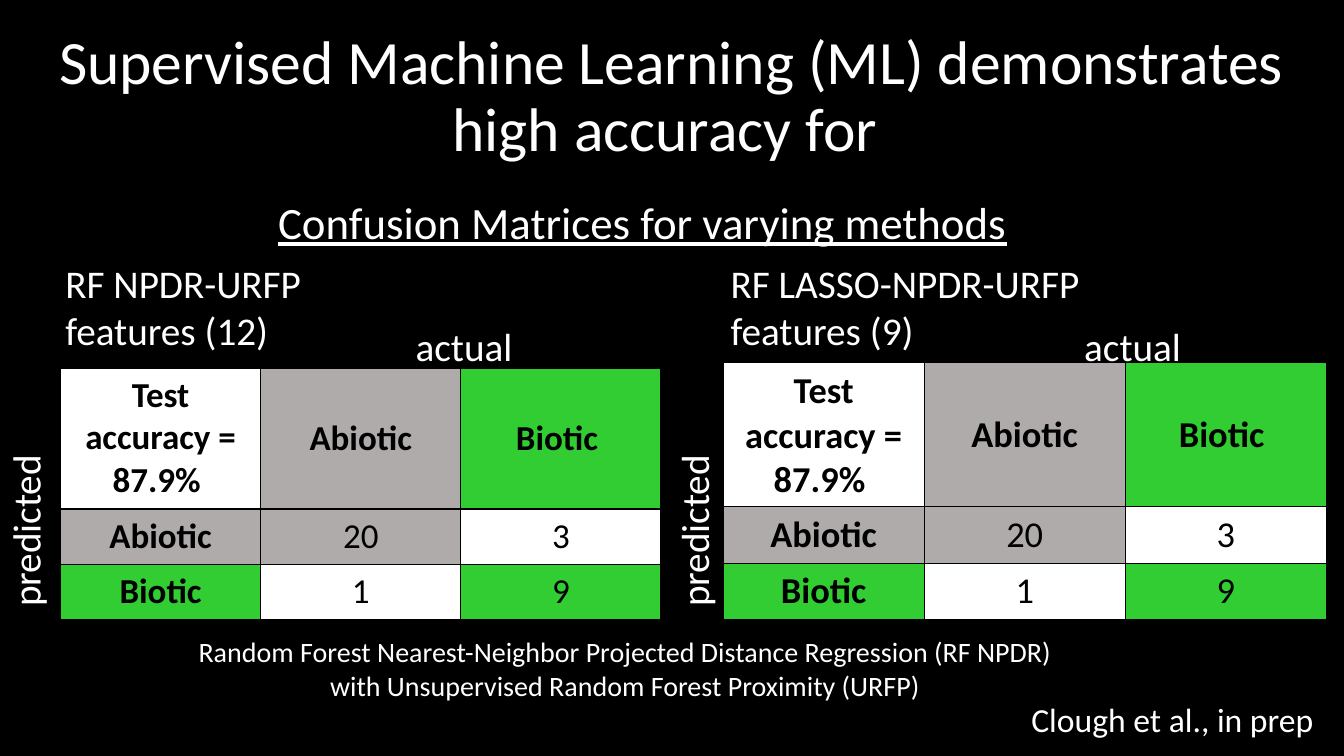
from dataclasses import dataclass

from lxml.etree import SubElement
from pptx import Presentation
from pptx.dml.color import RGBColor
from pptx.enum.text import MSO_ANCHOR, MSO_AUTO_SIZE, PP_ALIGN
from pptx.oxml.ns import qn
from pptx.util import Inches, Pt


@dataclass(frozen=True)
class Theme:
    font: str = "Calibri"
    background: str = "000000"
    text: str = "FFFFFF"
    cell_text: str = "000000"
    border: str = "000000"
    plain: str = "FFFFFF"
    abiotic: str = "AFABAB"
    biotic: str = "31CD32"
    title_size: int = 44
    subtitle_size: int = 32
    label_size: int = 28
    credit_size: int = 24
    caption_size: int = 20


class SlideBuilder:
    columns, rows = 160, 90

    def __init__(self, presentation, theme):
        self.theme = theme
        self.column = presentation.slide_width / self.columns
        self.row = presentation.slide_height / self.rows
        self.slide = presentation.slides.add_slide(presentation.slide_layouts[5])
        fill = self.slide.background.fill
        fill.solid()
        fill.fore_color.rgb = RGBColor.from_string(theme.background)

    def place(self, left, top, width, height):
        return (round(left * self.column), round(top * self.row),
                round(width * self.column), round(height * self.row))

    def format(self, paragraph, size, color, align=PP_ALIGN.LEFT, bold=False, underline=False):
        paragraph.alignment = align
        font = paragraph.font
        font.name = self.theme.font
        font.size = Pt(size)
        font.bold = bold
        font.underline = underline
        font.color.rgb = RGBColor.from_string(color)

    def title(self, text, area):
        shape = self.slide.shapes.title
        shape.left, shape.top, shape.width, shape.height = self.place(*area)
        frame = shape.text_frame
        frame.text = text
        frame.auto_size = MSO_AUTO_SIZE.NONE
        frame.vertical_anchor = MSO_ANCHOR.MIDDLE
        frame.paragraphs[0].line_spacing = 0.9
        self.format(frame.paragraphs[0], self.theme.title_size, self.theme.text, PP_ALIGN.CENTER)

    def text(self, text, area, size, wrap=True, rotation=0, **style):
        shape = self.slide.shapes.add_textbox(*self.place(*area))
        shape.rotation = rotation
        frame = shape.text_frame
        frame.text = text
        frame.word_wrap = wrap
        frame.auto_size = MSO_AUTO_SIZE.SHAPE_TO_FIT_TEXT
        self.format(frame.paragraphs[0], size, self.theme.text, **style)

    def border(self, cell):
        properties = cell._tc.get_or_add_tcPr()
        for index, side in enumerate(("lnL", "lnR", "lnT", "lnB")):
            line = SubElement(properties, qn(f"a:{side}"), w=str(Pt(1)))
            fill = SubElement(line, qn("a:solidFill"))
            SubElement(fill, qn("a:srgbClr"), val=self.theme.border)
            properties.insert(index, line)

    def confusion_matrix(self, values, area, row_heights, size):
        theme = self.theme
        table = self.slide.shapes.add_table(3, 3, *self.place(*area)).table
        table.first_row = table.horz_banding = False
        for row, height in zip(table.rows, row_heights):
            row.height = round(height * self.row)
        class_fills = (theme.plain, theme.abiotic, theme.biotic)
        for row, texts in enumerate(values):
            for column, text in enumerate(texts):
                cell = table.cell(row, column)
                header = row == 0 or column == 0
                cell.text = text
                cell.margin_left = cell.margin_right = Inches(0.13)
                cell.margin_top = cell.margin_bottom = Inches(0.06)
                if row == 0 and column > 0:
                    cell.vertical_anchor = MSO_ANCHOR.MIDDLE
                cell.fill.solid()
                fill = class_fills[max(row, column)] if header or row == column else theme.plain
                cell.fill.fore_color.rgb = RGBColor.from_string(fill)
                self.format(cell.text_frame.paragraphs[0], size, theme.cell_text,
                            PP_ALIGN.CENTER, bold=header)
                self.border(cell)


def main():
    presentation = Presentation()
    presentation.slide_width = Inches(13.33)
    presentation.slide_height = Inches(7.5)
    theme = Theme()
    builder = SlideBuilder(presentation, theme)

    builder.title("Supervised Machine Learning (ML) demonstrates high accuracy for ",
                  (0, 3, 160, 17.4))
    builder.text("Confusion Matrices for varying methods", (31.92, 22.56, 90, 7.68),
                 theme.subtitle_size, wrap=False, underline=True)

    matrix = (("Test accuracy = 87.9% ", "Abiotic", "Biotic "),
              ("Abiotic", "20", "3"),
              ("Biotic", "1", "9"))
    methods = (
        ("RF NPDR-URFP features (12)", 6.6, 36.5, (7.2, 43.8, 71.5, 30), 25, (16.8, 6.6, 6.6)),
        ("RF LASSO-NPDR-URFP features (9)", 85.8, 44.6, (86.1, 43.2, 71.8, 30.6), 26,
         (17.1, 6.75, 6.75)),
    )
    for index, (heading, left, width, area, size, heights) in enumerate(methods):
        shift = index * 79.6
        builder.text(heading, (left, 30.24, width, 12.5), theme.label_size)
        builder.confusion_matrix(matrix, area, heights, size)
        builder.text("predicted", (shift - 7.92, 59.1, 21.84, 6.84), theme.label_size, rotation=270)
        builder.text("actual", (shift + 48.3, 37.8, 21.84, 6.84), theme.label_size)

    builder.text("Random Forest Nearest-Neighbor Projected Distance Regression (RF NPDR) "
                 "with Unsupervised Random Forest Proximity (URFP)",
                 (20.9, 75, 107, 9.24), theme.caption_size, align=PP_ALIGN.CENTER)
    builder.text("Clough et al., in prep", (121.6, 82.56, 36.2, 6), theme.credit_size, wrap=False)
    presentation.save("out.pptx")


if __name__ == "__main__":
    main()
